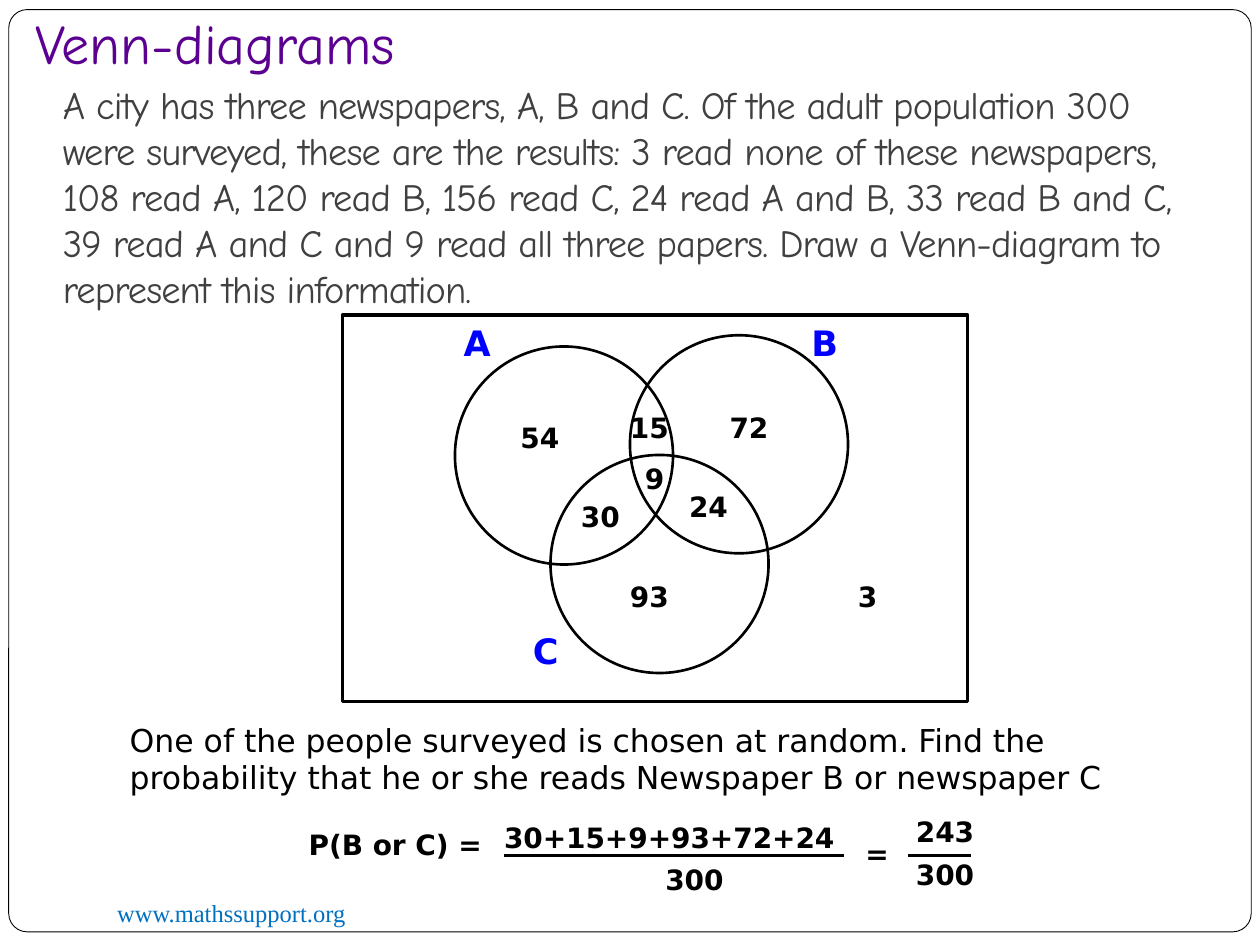
from typing import NamedTuple

from lxml.etree import SubElement
from pptx import Presentation
from pptx.dml.color import RGBColor
from pptx.enum.shapes import MSO_CONNECTOR as Connector, MSO_SHAPE as Preset
from pptx.enum.text import MSO_ANCHOR as Anchor, MSO_AUTO_SIZE as AutoSize
from pptx.oxml.ns import qn
from pptx.util import Pt

COLORS = {
    "paper": "FFFFFF",
    "ink": "000000",
    "title": "5B0091",
    "body": "404040",
    "set": "0000FF",
    "link": "0070C0",
}
COMIC, SANS, SERIF = "Comic Neue", "DejaVu Sans", "Times New Roman"
CIRCLE_SIZE = 124.6
LABEL_HEIGHT = 31.7
NUMBER_HEIGHT = 26.6


class Box(NamedTuple):
    left: float
    top: float
    width: float
    height: float


class Style(NamedTuple):
    font: str
    size: float
    color: str
    bold: bool = False
    spacing: float = 0


class NewsSet(NamedTuple):
    name: str
    left: float
    top: float
    label: Box


class Number(NamedTuple):
    text: str
    left: float
    top: float
    width: float


class Bar(NamedTuple):
    start: float
    end: float


TITLE = Style(COMIC, 32, "title")
BODY = Style(COMIC, 22, "body", spacing=-0.5)
QUESTION = Style(SANS, 18, "ink")
SET_LABEL = Style(SANS, 20, "set", bold=True)
NUMBER = Style(SANS, 16, "ink", bold=True)
FOOTER = Style(SERIF, 14, "link")

SETS = [
    NewsSet("A", 260, 198, Box(257.8, 180, 30.2, LABEL_HEIGHT)),
    NewsSet("B", 360, 191.6, Box(456.5, 180, 30.2, LABEL_HEIGHT)),
    NewsSet("C", 314.6, 260, Box(297.4, 356.4, 28.8, LABEL_HEIGHT)),
]
REGIONS = [
    Number("9", 368.6, 260, 17.3),
    Number("30", 332, 282.2, 28),
    Number("24", 393.8, 276.5, 28),
    Number("15", 360, 231.1, 28),
    Number("93", 360, 327.6, 28),
    Number("72", 416.9, 231.1, 28),
    Number("54", 297.4, 236.9, 28),
    Number("3", 490.3, 327.6, 28),
]
EQUATION = [
    Number("P(B or C) =", 176.4, 469.4, 103.7),
    Number("30+15+9+93+72+24", 288, 465.1, 202.3),
    Number("300", 380.2, 489.6, 45.4),
    Number("=", 494.6, 474.5, 28.8),
    Number("243", 523.4, 462.2, 34.6),
    Number("300", 523.4, 486.7, 45.4),
]
BAR_TOP = 488.9
BARS = [Bar(288, 482.4), Bar(519.1, 555.1)]


def rgb(name: str) -> RGBColor:
    return RGBColor.from_string(COLORS[name])


def add_outline(slide, preset, box: Box, weight: float, fill: str = ""):
    shape = slide.shapes.add_shape(preset, *map(Pt, box))
    shape.shadow.inherit = False
    if fill:
        shape.fill.solid()
        shape.fill.fore_color.rgb = rgb(fill)
    else:
        shape.fill.background()
    shape.line.color.rgb = rgb("ink")
    shape.line.width = Pt(weight)
    return shape


def add_text(slide, text: str, box: Box, style: Style, wrap: bool = True,
             side_inset: float = 7.2, grow: bool = True) -> None:
    frame = slide.shapes.add_textbox(*map(Pt, box)).text_frame
    frame.word_wrap = wrap
    frame.auto_size = AutoSize.SHAPE_TO_FIT_TEXT if grow else AutoSize.NONE
    frame.vertical_anchor = Anchor.TOP if grow else Anchor.MIDDLE
    frame.margin_left = frame.margin_right = Pt(side_inset)
    frame.margin_top = frame.margin_bottom = Pt(3.6)
    frame.text = text
    for run in frame.paragraphs[0].runs:
        run.font.name = style.font
        run.font.size = Pt(style.size)
        run.font.bold = style.bold
        run.font.color.rgb = rgb(style.color)
        if style.spacing:
            run.font._element.set("spc", str(round(style.spacing * 100)))


def add_number(slide, number: Number) -> None:
    box = Box(number.left, number.top, number.width, NUMBER_HEIGHT)
    add_text(slide, number.text, box, NUMBER, side_inset=0)


def add_set(slide, news: NewsSet) -> None:
    circle = Box(news.left, news.top, CIRCLE_SIZE, CIRCLE_SIZE)
    add_outline(slide, Preset.OVAL, circle, 1.5)
    add_text(slide, news.name, news.label, SET_LABEL, wrap=False)


def add_bar(slide, bar: Bar) -> None:
    line = slide.shapes.add_connector(
        Connector.STRAIGHT, Pt(bar.start), Pt(BAR_TOP), Pt(bar.end), Pt(BAR_TOP))
    line.line.color.rgb = rgb("ink")
    line.line.width = Pt(1.75)
    SubElement(line._element.spPr, qn("a:effectLst"))


def main() -> None:
    deck = Presentation()
    deck.slide_width, deck.slide_height = Pt(720), Pt(540)
    slide = deck.slides.add_slide(deck.slide_layouts[6])

    # Page border and footer
    border = add_outline(slide, Preset.ROUNDED_RECTANGLE,
                         Box(5, 5.5, 710, 527), 0.5, fill="paper")
    border.adjustments[0] = 0.02
    add_text(slide, "www.mathssupport.org", Box(59.8, 509.8, 234, 24.5), FOOTER)

    # Title and problem
    add_text(slide, "Venn-diagrams", Box(13, 0, 612, 48.2), TITLE, grow=False)
    add_text(
        slide,
        "A city has three newspapers, A, B and C. Of the adult population 300 "
        "were surveyed, these are the results: 3 read none of these newspapers, "
        "108 read A, 120 read B, 156 read C, 24 read A and B, 33 read B and C, "
        "39 read A and C and 9 read all three papers. Draw a Venn-diagram to "
        "represent this information.",
        Box(28.8, 42.5, 668.9, 140.4), BODY)

    # Venn diagram
    add_outline(slide, Preset.RECTANGLE, Box(195.8, 180, 357.1, 221), 2)
    for news in SETS:
        add_set(slide, news)
    for region in REGIONS:
        add_number(slide, region)

    # Question and answer
    add_text(
        slide,
        "One of the people surveyed is chosen at random. Find the probability "
        "that he or she reads Newspaper B or newspaper C",
        Box(67, 408.2, 617.8, 51.1), QUESTION)
    for term in EQUATION:
        add_number(slide, term)
    for bar in BARS:
        add_bar(slide, bar)

    deck.save("out.pptx")


if __name__ == "__main__":
    main()
